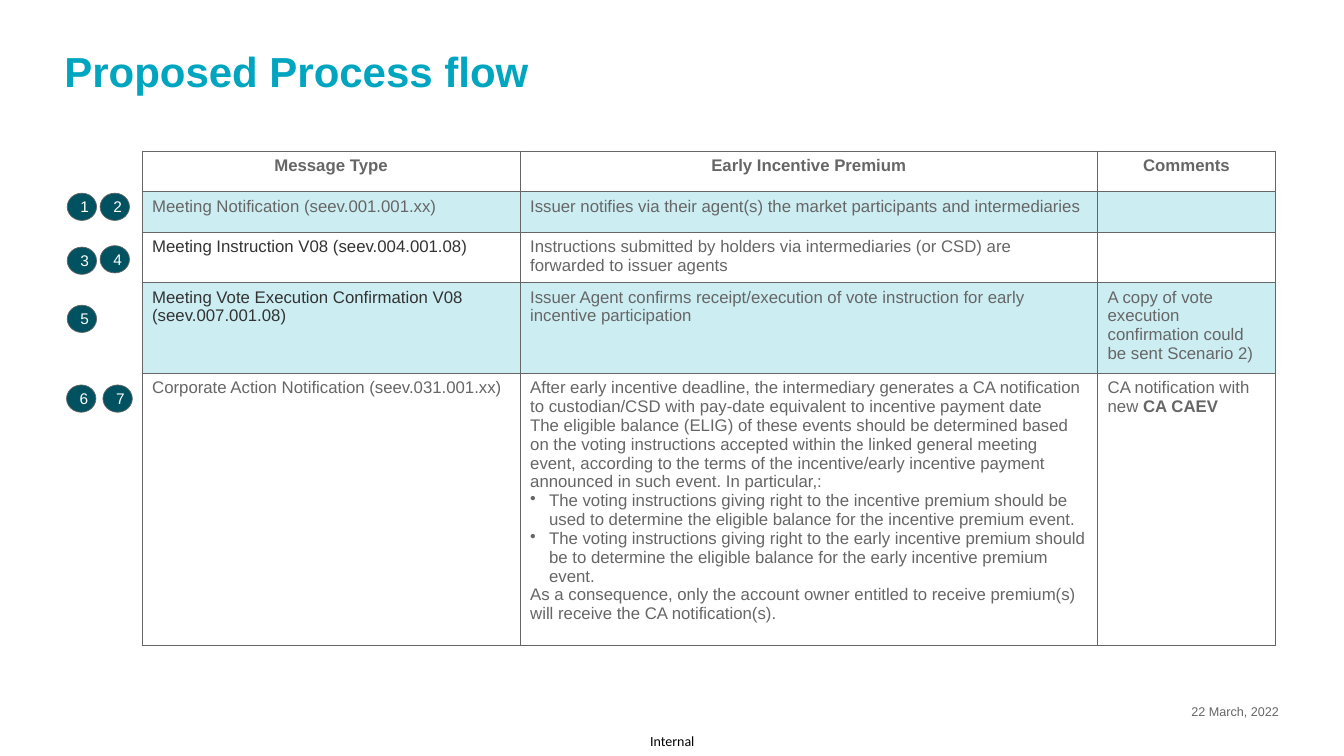
import pptx
import pptx.util
import pptx.dml.color
import pptx.enum.shapes
import pptx.enum.text
import pptx.oxml
import pptx.oxml.ns
import lxml.etree

Pt = pptx.util.Pt
RGBColor = pptx.dml.color.RGBColor
Align = pptx.enum.text.PP_ALIGN
Anchor = pptx.enum.text.MSO_ANCHOR

TEAL = RGBColor(0x00, 0xA5, 0xC0)
DARK_TEAL = RGBColor(0x00, 0x52, 0x60)
GREY = RGBColor(0x66, 0x66, 0x66)
DARK_GREY = RGBColor(0x33, 0x33, 0x33)
WHITE = RGBColor(0xFF, 0xFF, 0xFF)
BLACK = RGBColor(0x00, 0x00, 0x00)

COLUMN_WIDTHS = [270, 412.5, 127]
ROW_HEIGHTS = [29, 29, 34.5, 60.5, 182]
BULLET = "• "

PREMIUM_RULES = [
    "After early incentive deadline, the intermediary generates a CA notification to custodian/CSD "
    "with pay-date equivalent to incentive payment date",
    "The eligible balance (ELIG) of these events should be determined based on the voting instructions "
    "accepted within the linked general meeting event, according to the terms of the incentive/early "
    "incentive payment announced in such event. In particular,:",
    "• The voting instructions giving right to the incentive premium should be used to determine the "
    "eligible balance for the incentive premium event.",
    "• The voting instructions giving right to the early incentive premium should be to determine the "
    "eligible balance for the early incentive premium event.",
    "As a consequence, only the account owner entitled to receive premium(s) will receive the CA "
    "notification(s).",
]
MESSAGES = [
    ["Message Type", "Early Incentive Premium", "Comments"],
    ["Meeting Notification (seev.001.001.xx)",
     "Issuer notifies via their agent(s) the market participants and intermediaries", ""],
    ["Meeting Instruction V08 (seev.004.001.08)",
     "Instructions submitted by holders via intermediaries (or CSD) are forwarded to issuer agents", ""],
    ["Meeting Vote Execution Confirmation V08 (seev.007.001.08)",
     "Issuer Agent confirms receipt/execution of vote instruction for early incentive participation",
     "A copy of vote execution confirmation could be sent Scenario 2)"],
    ["Corporate Action Notification (seev.031.001.xx)", "\n".join(PREMIUM_RULES),
     "CA notification with new "],
]
NEW_EVENT = "CA CAEV"

STEPS = [("1", 48, 138), ("2", 71.5, 138), ("3", 48, 176.5), ("4", 71.5, 175.5),
         ("5", 48, 218), ("6", 47.5, 275), ("7", 73.5, 275)]


def style(font, size, color, bold=False, name="Arial"):
    font.size = Pt(size)
    font.bold = bold
    font.name = name
    font.color.rgb = color


def add_label(slide, box, text, size, color, align=Align.LEFT, anchor=Anchor.TOP,
              bold=False, name="Arial", spacing=1.0):
    frame = slide.shapes.add_textbox(*map(Pt, box)).text_frame
    frame.word_wrap = True
    frame.vertical_anchor = anchor
    frame.margin_left = frame.margin_right = frame.margin_top = frame.margin_bottom = 0
    frame.text = text
    line = frame.paragraphs[0]
    line.alignment = align
    line.line_spacing = spacing
    style(line.runs[0].font, size, color, bold, name)


def add_borders(cell):
    properties = cell._tc.get_or_add_tcPr()
    for side in "LRTB":
        properties.append(pptx.oxml.parse_xml(
            f'<a:ln{side} {pptx.oxml.ns.nsdecls("a")} w="12700"><a:solidFill>'
            f'<a:srgbClr val="{GREY}"/></a:solidFill></a:ln{side}>'))


def tint(cell):
    cell.fill.solid()
    cell.fill.fore_color.rgb = TEAL
    color = cell._tc.tcPr.find(pptx.oxml.ns.qn("a:solidFill"))[0]
    lxml.etree.SubElement(color, pptx.oxml.ns.qn("a:alpha")).set("val", "20000")


def add_bullet(paragraph):
    properties = paragraph._p.get_or_add_pPr()
    properties.set("marL", str(Pt(13.5)))
    properties.set("indent", str(-Pt(13.5)))
    lxml.etree.SubElement(properties, pptx.oxml.ns.qn("a:buChar")).set("char", "•")


def fill_cell(cell, text, color, heading):
    cell.text_frame.text = text.replace(BULLET, "")
    for paragraph, line in zip(cell.text_frame.paragraphs, text.split("\n")):
        if line.startswith(BULLET):
            add_bullet(paragraph)
        if heading:
            paragraph.alignment = Align.CENTER
        style(paragraph.font, 12, color, heading)
        for run in paragraph.runs:
            style(run.font, 12, color, heading)


def add_message_table(slide, left, top):
    table = slide.shapes.add_table(
        len(ROW_HEIGHTS), len(COLUMN_WIDTHS), Pt(left), Pt(top),
        Pt(sum(COLUMN_WIDTHS)), Pt(sum(ROW_HEIGHTS))).table
    table.first_row = table.horz_banding = False
    for column, width in zip(table.columns, COLUMN_WIDTHS):
        column.width = Pt(width)
    for row, height in zip(table.rows, ROW_HEIGHTS):
        row.height = Pt(height)
    for r, messages in enumerate(MESSAGES):
        for c, text in enumerate(messages):
            cell = table.cell(r, c)
            add_borders(cell)
            if r % 2:
                tint(cell)
            else:
                cell.fill.background()
            fill_cell(cell, text, DARK_GREY if c == 0 and r in (2, 3) else GREY, r == 0)
    event = table.cell(4, 2).text_frame.paragraphs[0].add_run()
    event.text = NEW_EVENT
    style(event.font, 12, GREY, True)


def add_step(slide, number, left, top):
    step = slide.shapes.add_shape(pptx.enum.shapes.MSO_SHAPE.OVAL, Pt(left), Pt(top), Pt(21), Pt(19.5))
    step.shadow.inherit = False
    step.fill.solid()
    step.fill.fore_color.rgb = DARK_TEAL
    step.line.color.rgb = GREY
    step.line.width = Pt(0.5)
    frame = step.text_frame
    frame.word_wrap = True
    frame.vertical_anchor = Anchor.MIDDLE
    frame.margin_left = frame.margin_right = frame.margin_top = frame.margin_bottom = Pt(8.5)
    frame.text = number
    frame.paragraphs[0].alignment = Align.CENTER
    style(frame.paragraphs[0].runs[0].font, 11, WHITE)


def build_process_slide(deck):
    slide = deck.slides.add_slide(deck.slide_layouts[6])
    add_label(slide, (453.5, 519, 53.5, 21), "Internal", 10, BLACK,
              Align.CENTER, Anchor.MIDDLE, name="Calibri")
    add_message_table(slide, 101.5, 108)
    add_label(slide, (46, 29, 867.5, 73.5), "Proposed Process flow", 30, TEAL, bold=True, spacing=1.1)
    add_label(slide, (697.5, 502.5, 216, 17.5), "22 March, 2022", 9, GREY, Align.RIGHT)
    for step in STEPS:
        add_step(slide, *step)


def main():
    deck = pptx.Presentation()
    deck.slide_width, deck.slide_height = Pt(960), Pt(540)
    build_process_slide(deck)
    deck.save("out.pptx")


if __name__ == "__main__":
    main()
